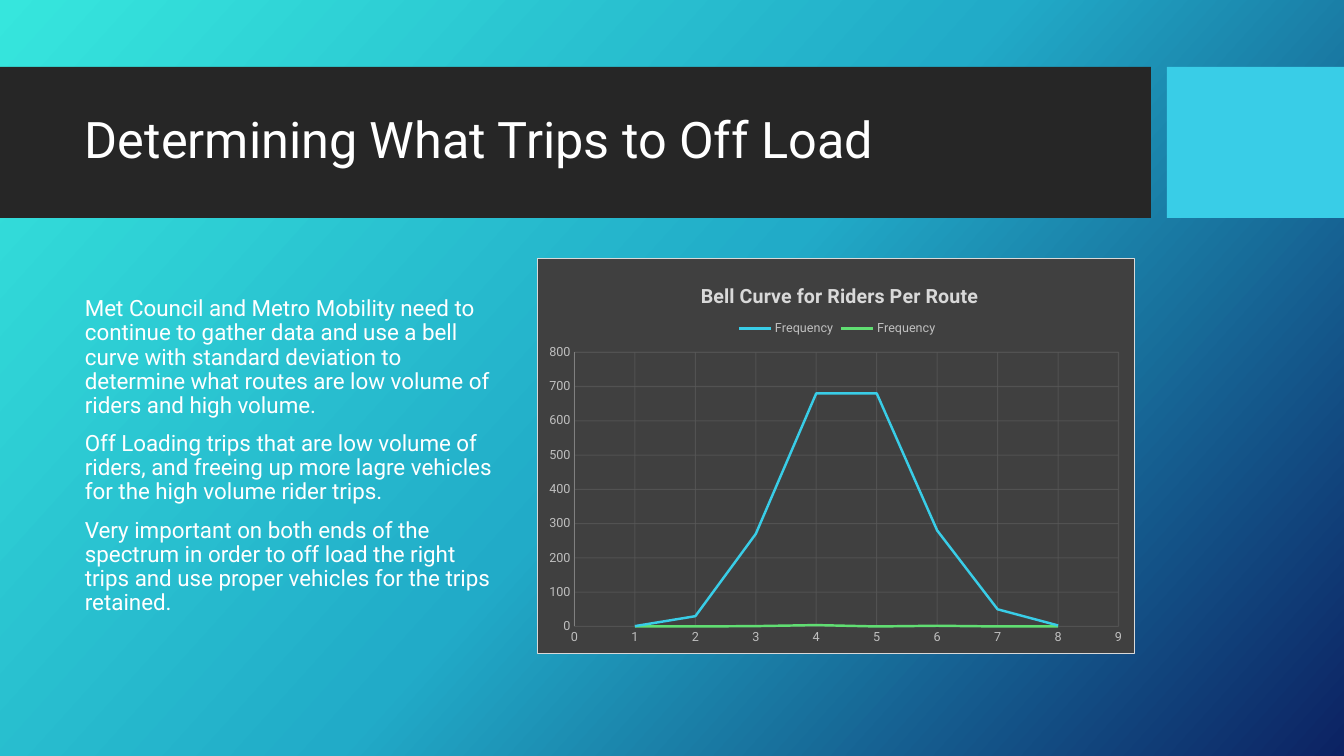
from copy import deepcopy

from lxml import etree
from pptx import Presentation
from pptx.chart.data import XyChartData
from pptx.dml.color import RGBColor
from pptx.enum.chart import XL_CHART_TYPE, XL_LEGEND_POSITION, XL_TICK_MARK
from pptx.enum.shapes import MSO_SHAPE
from pptx.enum.text import MSO_ANCHOR
from pptx.oxml import parse_xml
from pptx.oxml.ns import nsdecls, qn
from pptx.util import Emu, Pt

SMOOTH = XL_CHART_TYPE.XY_SCATTER_SMOOTH_NO_MARKERS
LEGEND_TOP = XL_LEGEND_POSITION.TOP
NO_TICK = XL_TICK_MARK.NONE
RECTANGLE = MSO_SHAPE.RECTANGLE
MIDDLE = MSO_ANCHOR.MIDDLE
FONT = "Roboto"
WHITE, PALE = "FFFFFF", "BFBFBF"

SLIDE = (1344, 756)
BACKGROUND = [(0, "36E6DD"), (0.5, "21ABC8"), (1, "0C2263")]
BACKGROUND_ANGLE = 42
BANDS = [((0, 67, 1151, 151), "262626"), ((1167, 67, 177, 151), "39CDE7")]

TITLE = ["Determining What Trips to Off Load"]
TITLE_AREA = (75, 83, 1059, 119)
BODY = [
    "Met Council and Metro Mobility need to continue to gather data and use a bell curve "
    "with standard deviation to determine what routes are low volume of riders and high volume.",
    "Off Loading trips that are low volume of riders, and freeing up more lagre vehicles "
    "for the high volume rider trips.",
    "Very important on both ends of the spectrum in order to off load the right trips "
    "and use proper vehicles for the trips retained.",
]
BODY_AREA = (75, 258, 427, 397)

CHART_TITLE = "Bell Curve for Riders Per Route"
CHART_AREA = (537, 258, 598, 396)
PLOT_AREA = (574, 352, 545, 275)
CHART_TITLE_AT = (697, 278)
LEGEND_AT = (735, 317)
SERIES = [
    ("Frequency", "39CDE7", [1, 30, 270, 680, 680, 280, 50, 3]),
    ("Frequency", "60DE72", [0, 0, 1, 4, 0, 2, 0, 0]),
]
AXIS_RANGES = {"category_axis": (9, 1), "value_axis": (800, 100)}


def px(length):
    return Emu(round(length * 914400 / 100.8))


def color(value):
    return RGBColor.from_string(value)


def set_font(font, size, value, bold=False):
    font.name, font.size, font.bold = FONT, Pt(size), bold
    font.color.rgb = color(value)


def set_line(line, value, width):
    line.color.rgb = color(value)
    line.width = Pt(width)


def paint_background(page):
    fill = page.background.fill
    fill.gradient()
    fill.gradient_angle = 360 - BACKGROUND_ANGLE
    stops = page.element.xpath(".//a:gsLst")[0]
    stops.insert(1, deepcopy(stops[0]))
    for stop, (position, value) in zip(fill.gradient_stops, BACKGROUND):
        stop.position = position
        stop.color.rgb = color(value)


def add_band(page, area, value):
    band = page.shapes.add_shape(RECTANGLE, *map(px, area))
    band.shadow.inherit = False
    band.fill.solid()
    band.fill.fore_color.rgb = color(value)
    band.line.fill.background()


def add_text(page, area, lines, size):
    frame = page.shapes.add_textbox(*map(px, area)).text_frame
    frame.word_wrap = True
    frame.vertical_anchor = MIDDLE
    for index, line in enumerate(lines):
        para = frame.add_paragraph() if index else frame.paragraphs[0]
        para.text = line
        para.line_spacing = 0.9
        para.space_before = Pt(10 if index else 0)
        set_font(para.font, size, WHITE)


def place(element, index, area):
    for present in element.findall(qn("c:layout")):
        element.remove(present)
    layout = parse_xml(f"<c:layout {nsdecls('c')}><c:manualLayout/></c:layout>")
    element.insert(index, layout)
    left, top, width, height = CHART_AREA
    shares = [(area[0] - left) / width, (area[1] - top) / height]
    settings = [("xMode", "edge"), ("yMode", "edge")]
    if len(area) == 4:
        settings.insert(0, ("layoutTarget", "inner"))
        shares += [area[2] / width, area[3] / height]
    settings += [(name, f"{share:.4f}") for name, share in zip("xywh", shares)]
    for name, value in settings:
        etree.SubElement(layout[0], qn(f"c:{name}")).set("val", value)


def style_axis(axis, maximum, step):
    axis.minimum_scale, axis.maximum_scale, axis.major_unit = 0, maximum, step
    axis.major_tick_mark = axis.minor_tick_mark = NO_TICK
    axis.has_major_gridlines = True
    grid = axis.major_gridlines
    set_line(grid.format.line, "595959", 0.75)
    for tint in axis._element.xpath("c:majorGridlines//a:srgbClr"):
        etree.SubElement(tint, qn("a:alpha")).set("val", "75000")
    set_font(axis.tick_labels.font, 9, PALE)


def add_bell_chart(page):
    data = XyChartData()
    for name, _, values in SERIES:
        series = data.add_series(name)
        for point in enumerate(values, 1):
            series.add_data_point(*point)
    chart = page.shapes.add_chart(SMOOTH, *map(px, CHART_AREA), data).chart
    set_font(chart.font, 10, WHITE)
    for series, (_, value, _) in zip(chart.plots[0].series, SERIES):
        series.smooth = True
        set_line(series.format.line, value, 1.75)
    chart.plots[0].vary_by_categories = False
    for name, limits in AXIS_RANGES.items():
        style_axis(getattr(chart, name), *limits)
    chart.category_axis.format.line.fill.background()
    set_line(chart.value_axis.format.line, "808080", 0.75)

    chart.has_title = True
    title = chart.chart_title.text_frame
    title.text = CHART_TITLE
    set_font(title.paragraphs[0].font, 14, "D9D9D9", True)
    chart.has_legend = True
    legend = chart.legend
    legend.position = LEGEND_TOP
    legend.include_in_layout = False
    set_font(legend.font, 9, PALE)

    space = chart._chartSpace
    plot = space.chart.plotArea
    place(plot, 0, PLOT_AREA)
    place(chart.chart_title._element, 1, CHART_TITLE_AT)
    place(legend._element, 1, LEGEND_AT)
    plot.append(parse_xml(f"<c:spPr {nsdecls('c', 'a')}><a:noFill/></c:spPr>"))
    space.chart.addnext(parse_xml(
        f"<c:spPr {nsdecls('c', 'a')}>"
        '<a:solidFill><a:srgbClr val="404040"/></a:solidFill>'
        f'<a:ln w="{Pt(0.75)}"><a:solidFill><a:srgbClr val="D9D9D9"/></a:solidFill></a:ln>'
        "</c:spPr>"))


def main():
    """Build the slide on which trips to off load."""
    deck = Presentation()
    deck.slide_width, deck.slide_height = map(px, SLIDE)
    page = deck.slides.add_slide(deck.slide_layouts[6])
    paint_background(page)
    for area, value in BANDS:
        add_band(page, area, value)
    add_text(page, TITLE_AREA, TITLE, 36)
    add_bell_chart(page)
    add_text(page, BODY_AREA, BODY, 16)
    deck.save("out.pptx")


if __name__ == "__main__":
    main()
